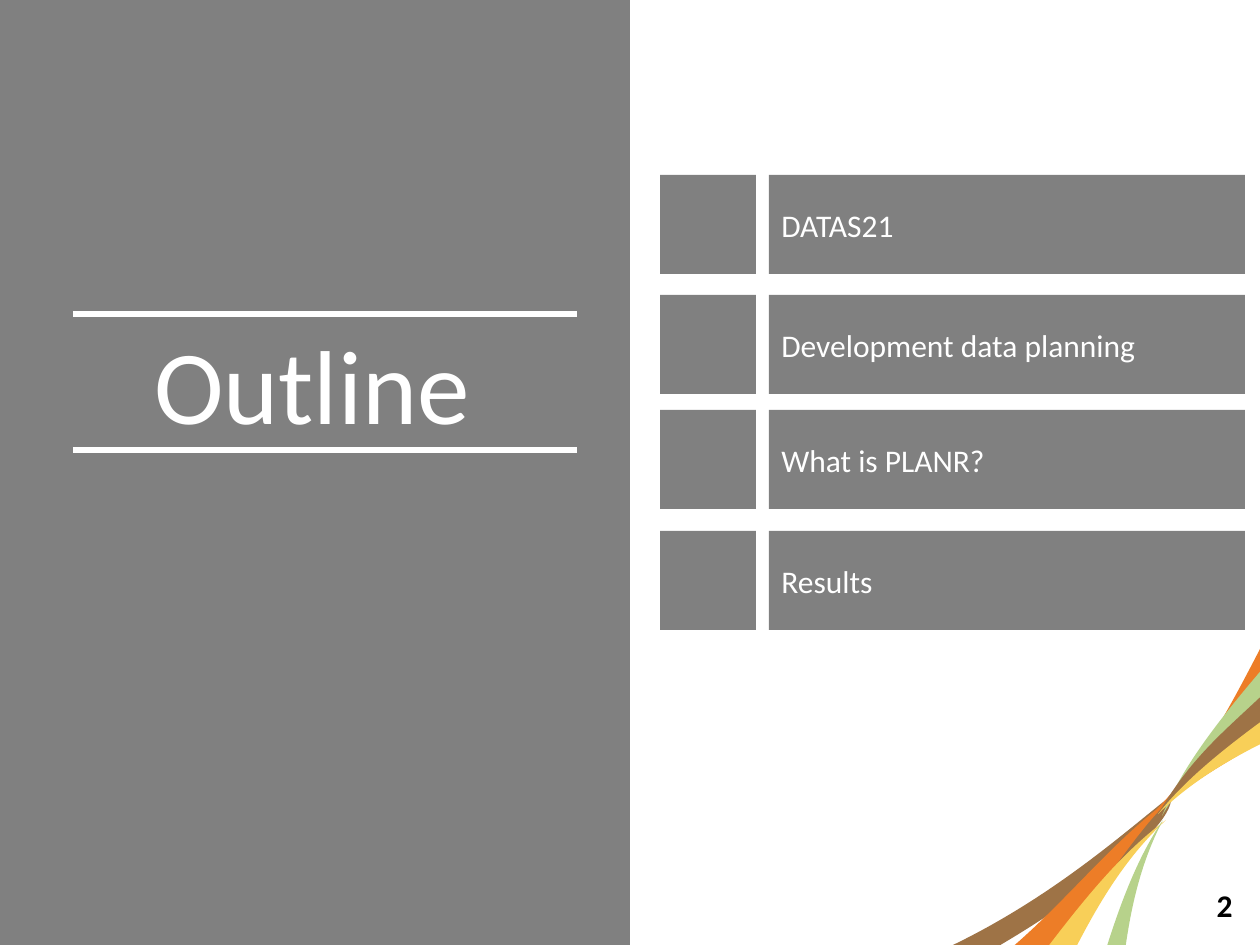
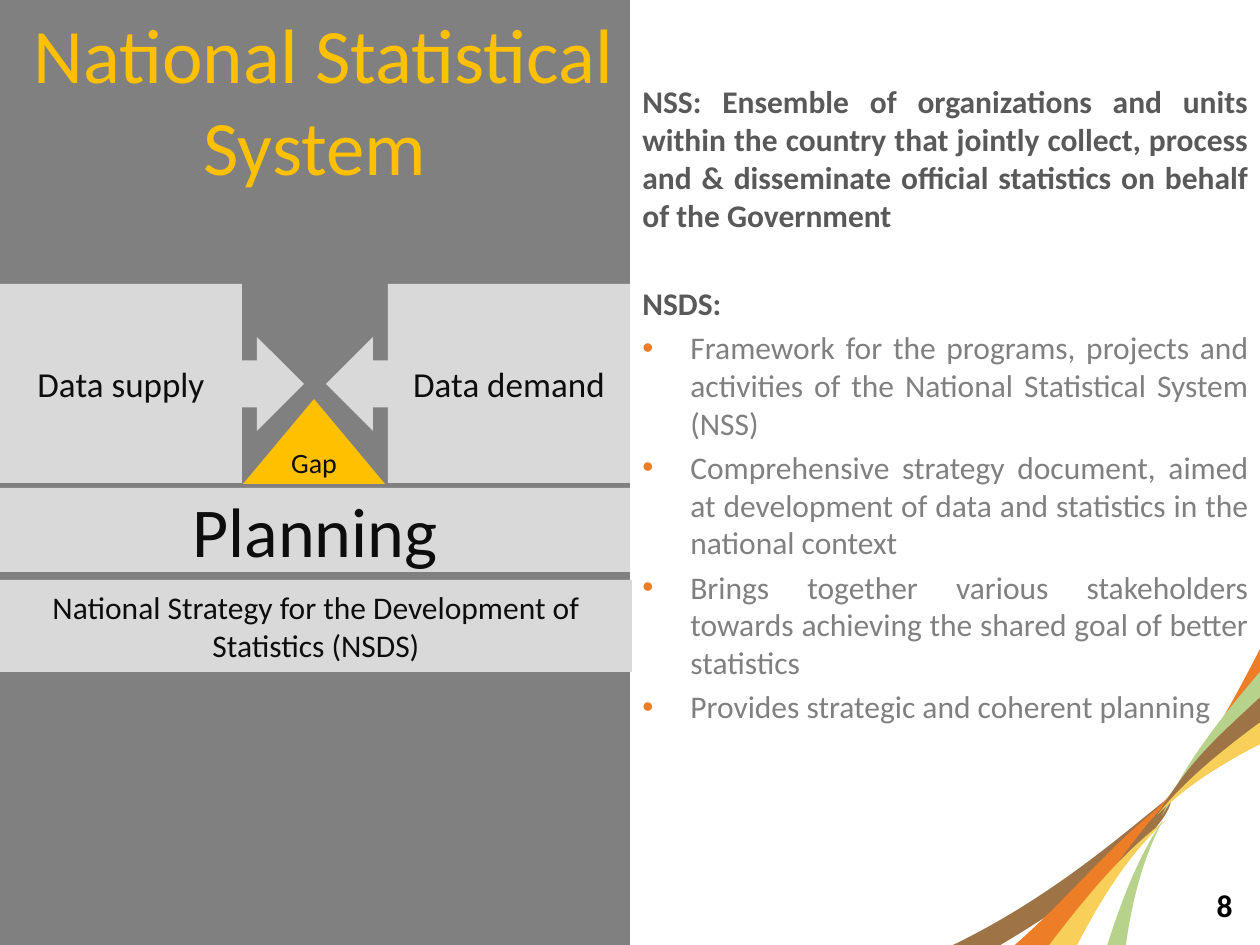
from lxml import etree
from pptx import Presentation
from pptx.dml.color import RGBColor
from pptx.enum.shapes import MSO_CONNECTOR, MSO_SHAPE
from pptx.enum.text import MSO_ANCHOR, MSO_AUTO_SIZE, PP_ALIGN
from pptx.oxml.ns import qn
from pptx.util import Pt

RECTANGLE, TRIANGLE = MSO_SHAPE.RECTANGLE, MSO_SHAPE.ISOSCELES_TRIANGLE
LEFT_ARROW, RIGHT_ARROW = MSO_SHAPE.LEFT_ARROW, MSO_SHAPE.RIGHT_ARROW
STRAIGHT = MSO_CONNECTOR.STRAIGHT
TOP, MIDDLE = MSO_ANCHOR.TOP, MSO_ANCHOR.MIDDLE
NO_AUTO_SIZE = MSO_AUTO_SIZE.NONE
LEFT, CENTER = PP_ALIGN.LEFT, PP_ALIGN.CENTER
RIGHT, JUSTIFY = PP_ALIGN.RIGHT, PP_ALIGN.JUSTIFY

EMU_PER_PX = 914400 / 126
SLIDE_WIDTH, SLIDE_HEIGHT = 1260, 945
PANEL_WIDTH = 630
TITLE_ONLY = 5
FONT, BULLET_FONT = "Calibri", "Arial"

GREY, LIGHT_GREY, DARK_GREY = "808080", "D9D9D9", "595959"
WHITE, BLACK, INK, GOLD = "FFFFFF", "000000", "0D0D0D", "FFC000"
BROWN, ORANGE, YELLOW, GREEN = "9E7346", "ED7D27", "F8CF58", "B7D28B"

# Each ribbon: colour, start point, then lines (one point) and curves (three points)
RIBBONS = [
    (BROWN, (1171, 796), [
        [(1177, 825), (1077, 905), (958, 969)], [(897, 969)],
        [(1031, 919), (1124, 832), (1171, 796)]]),
    (ORANGE, (1281, 609), [
        [(1304, 718)], [(1247, 750), (1188, 782), (1159, 811)],
        [(1124, 848), (1090, 910), (1029, 969)], [(985, 969)],
        [(1051, 920), (1097, 857), (1157, 809)],
        [(1210, 755), (1249, 668), (1281, 609)]]),
    (YELLOW, (1166, 820), [
        [(1120, 863), (1092, 915), (1065, 969)], [(1031, 969)],
        [(1075, 911), (1116, 857), (1166, 820)]]),
    (GREEN, (1163, 820), [
        [(1140, 864), (1130, 911), (1124, 959)], [(1103, 959)],
        [(1119, 907), (1137, 858), (1163, 820)]]),
    (GREEN, (1288, 639), [
        [(1295, 677)], [(1245, 718), (1196, 757), (1162, 816)],
        [(1187, 755), (1237, 699), (1288, 639)]]),
    (BROWN, (1293, 665), [
        [(1302, 709)], [(1231, 752), (1178, 789), (1157, 816)],
        [(1197, 746), (1237, 723), (1293, 665)]]),
    (YELLOW, (1299, 694), [
        [(1305, 723)], [(1252, 747), (1201, 772), (1158, 814)],
        [(1193, 770), (1245, 733), (1299, 694)]]),
]
FIRST_RIBBON_ID = 100

OUTLINE_ITEMS = [
    (175, "DATAS21"),
    (295, "Development data planning"),
    (410, "What is PLANR?"),
    (531, "Results"),
]
NSS_DEFINITION = (
    "NSS: Ensemble of organizations and units within the country that jointly "
    "collect, process and & disseminate official statistics on behalf of the Government")
NSDS_POINTS = [
    "Framework for the programs, projects and activities of the National "
    "Statistical System (NSS)",
    "Comprehensive strategy document, aimed at development of data and "
    "statistics in the national context",
    "Brings together various stakeholders towards achieving the shared goal of "
    "better statistics",
    "Provides strategic and coherent planning",
]


def px(length):
    return round(length * EMU_PER_PX)


def color(hex_string):
    return RGBColor.from_string(hex_string)


def write(shape, text, size=18, ink=INK, bold=False, align=CENTER,
          anchor=MIDDLE, before=0, bullet=None, new=False):
    """Set the first paragraph of a shape, or append a new one."""
    frame = shape.text_frame
    frame.word_wrap = True
    frame.auto_size = NO_AUTO_SIZE
    frame.vertical_anchor = anchor
    paragraph = frame.add_paragraph() if new else frame.paragraphs[0]
    paragraph.alignment = align
    paragraph.space_before = Pt(before)
    run = paragraph.add_run()
    run.text = text
    run.font.name = FONT
    run.font.size = Pt(size)
    run.font.bold = bold
    run.font.color.rgb = color(ink)
    if bullet:
        properties = paragraph._p.get_or_add_pPr()
        properties.set("marL", str(px(48)))
        properties.set("indent", str(-px(48)))
        bullet_color = etree.SubElement(properties, qn("a:buClr"))
        etree.SubElement(bullet_color, qn("a:srgbClr"), val=bullet)
        etree.SubElement(properties, qn("a:buFont"), typeface=BULLET_FONT)
        etree.SubElement(properties, qn("a:buChar"), char="•")


def paint(shape, fill):
    shape.shadow.inherit = False
    shape.fill.solid()
    shape.fill.fore_color.rgb = color(fill)
    shape.line.fill.background()


def add_block(slide, kind, box, fill):
    shape = slide.shapes.add_shape(kind, *map(px, box))
    paint(shape, fill)
    return shape


def add_text_box(slide, box):
    return slide.shapes.add_textbox(*map(px, box))


def add_rule(slide, left, top, width):
    rule = slide.shapes.add_connector(
        STRAIGHT, px(left), px(top), px(left + width), px(top))
    rule.line.color.rgb = color(WHITE)
    rule.line.width = Pt(3)
    etree.SubElement(rule._element.spPr, qn("a:effectLst"))


def add_ribbon(group, fill, start, segments):
    builder = group.shapes.build_freeform(*map(px, start))
    points = [tuple(map(px, point)) for segment in segments for point in segment]
    builder.add_line_segments(points, close=True)
    ribbon = builder.convert_to_shape()
    paint(ribbon, fill)

    # Join each run of three points into one curve
    lines = iter(list(ribbon._element.iter(qn("a:lnTo"))))
    for segment in segments:
        parts = [next(lines) for point in segment]
        if len(parts) == 3:
            curve = etree.Element(qn("a:cubicBezTo"))
            parts[0].addprevious(curve)
            for part in parts:
                curve.append(part[0])
                part.getparent().remove(part)


def add_ribbons_to_layout(slide):
    """Draw the ribbons as a group, then move it to the shared layout."""
    group = slide.shapes.add_group_shape()
    for ribbon in RIBBONS:
        add_ribbon(group, *ribbon)
    for number, properties in enumerate(group._element.iter(qn("p:cNvPr"))):
        properties.set("id", str(FIRST_RIBBON_ID + number))
    slide.slide_layout.shapes._spTree.append(group._element)


def add_base(presentation, number):
    """Slide number and the grey left panel."""
    slide = presentation.slides.add_slide(presentation.slide_layouts[TITLE_ONLY])
    write(add_text_box(slide, (966, 880, 279, 50)), number,
          ink=BLACK, bold=True, align=RIGHT, anchor=TOP)
    add_block(slide, RECTANGLE, (0, 0, PANEL_WIDTH, SLIDE_HEIGHT), GREY)
    return slide


def set_title(slide, text, box, size, ink):
    title = slide.shapes.title
    title.left, title.top, title.width, title.height = map(px, box)
    write(title, text, size=size, ink=ink, anchor=TOP)
    # Lift the title above the panel
    title.element.getparent().append(title.element)


def add_outline_list(slide, left, width):
    marker, gap, height = 96, 13, 99
    for top, text in OUTLINE_ITEMS:
        add_block(slide, RECTANGLE, (left, top, marker, height), GREY)
        bar_box = (left + marker + gap, top, width - marker - gap, height)
        bar = add_block(slide, RECTANGLE, bar_box, GREY)
        write(bar, text, ink=WHITE, align=LEFT)


def add_planning_diagram(slide, top, width):
    """Supply and demand meet over a gap, above the planning bands."""
    side, height = 242, 199
    arrow_width, arrow_height, reach = 184, 94, 304
    gap = add_block(slide, TRIANGLE, (243, top + 115, 142, 85), GOLD)
    gap.text_frame.margin_left = gap.text_frame.margin_right = 0
    write(gap, "Gap", size=16)

    # Arrows pointing at the middle of the panel
    arrow_top = top + 53
    for kind, left in ((LEFT_ARROW, width - reach),
                       (RIGHT_ARROW, reach - arrow_width)):
        add_block(slide, kind, (left, arrow_top, arrow_width, arrow_height), LIGHT_GREY)

    # Labelled blocks
    for box, text, size in (
            ((0, top + 204, width, 84), "Planning", 40),
            ((0, top + 296, width + 2, 92),
             "National Strategy for the Development of Statistics (NSDS)", 18),
            ((width - side, top, side, height), "Data demand", 20),
            ((0, top, side, height), "Data supply", 20)):
        write(add_block(slide, RECTANGLE, box, LIGHT_GREY), text, size=size)


def add_definitions(slide, box):
    body = add_text_box(slide, box)
    common = {"align": JUSTIFY, "anchor": TOP}
    write(body, NSS_DEFINITION, ink=DARK_GREY, bold=True, before=3.6, **common)
    write(body, "NSDS:", ink=DARK_GREY, bold=True, before=29, new=True, **common)
    for point in NSDS_POINTS:
        write(body, point, ink=GREY, before=3.6, bullet=ORANGE, new=True, **common)


def build_outline_slide(presentation):
    slide = add_base(presentation, "2")
    add_ribbons_to_layout(slide)
    add_outline_list(slide, 660, 585)
    set_title(slide, "Outline", (2, 313, 620, 140), 60, WHITE)
    for top in (314, 450):
        add_rule(slide, 73, top, 504)


def build_system_slide(presentation):
    slide = add_base(presentation, "8")
    add_planning_diagram(slide, 284, PANEL_WIDTH)
    set_title(slide, " National Statistical System", (0, 0, PANEL_WIDTH, 199), 44, GOLD)
    add_definitions(slide, (PANEL_WIDTH, 76, 631, 755))


def main():
    presentation = Presentation()
    presentation.slide_width = px(SLIDE_WIDTH)
    presentation.slide_height = px(SLIDE_HEIGHT)
    build_outline_slide(presentation)
    build_system_slide(presentation)
    presentation.save("out.pptx")


if __name__ == "__main__":
    main()
